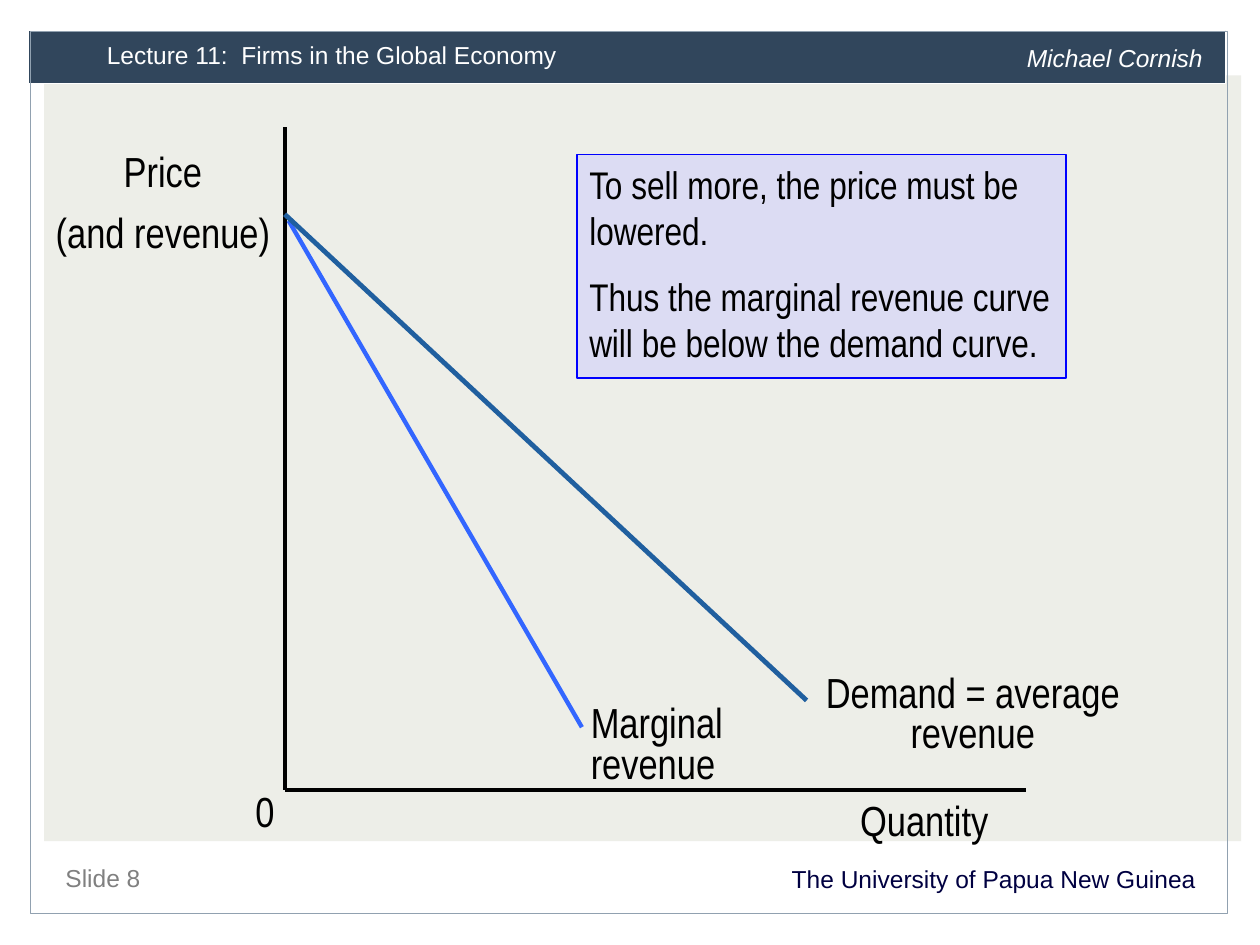
import pptx
import pptx.util
import pptx.dml.color
import pptx.enum.shapes
import pptx.enum.text
import pptx.oxml.ns
import lxml.etree

Cm, Pt = pptx.util.Cm, pptx.util.Pt
ALIGN = {
    "l": pptx.enum.text.PP_ALIGN.LEFT,
    "c": pptx.enum.text.PP_ALIGN.CENTER,
    "r": pptx.enum.text.PP_ALIGN.RIGHT,
}
RECT = pptx.enum.shapes.MSO_SHAPE.RECTANGLE
STRAIGHT = pptx.enum.shapes.MSO_CONNECTOR.STRAIGHT

THEME = {
    "body_font": "Arial", "chart_font": "Arial Narrow",
    "small": 14, "note": 22, "label": 24,
    "panel": "EDEEE8", "band": "31465C", "white": "FFFFFF", "frame": "91A1B0",
    "navy": "000041", "grey": "808080", "black": "000000",
    "demand": "205F9F", "marginal": "3366FF",
    "note_fill": "CCCCFF", "note_line": "0000FF",
}

# Boxes are left, top, width, height in centimetres.
TITLE = ("Lecture 11:  Firms in the Global Economy", (1.9, 0.64, 15.57, 0.94))
# text, box, alignment, line spacing in points, colour, italic
PAGE_TEXTS = [
    ("The University of Papua New Guinea", (1.07, 17.35, 23.29, 0.81), "r", 15, "navy", False),
    ("Slide 8", (1.07, 17.15, 11, 0.86), "l", 20, "grey", False),
    ("Michael Cornish", (20.45, 0.71, 4.17, 0.94), "l", 18, "white", True),
]
# box, fill, line, line width
PANEL = ((0.89, 1.52, 24.13, 15.44), "panel", None, 0)
BAND = ((0.58, 0.61, 24.13, 1.07), "band", "white", 0.5)
FRAME = ((0.61, 0.64, 24.13, 17.78), None, "frame", 0.75)
NOTE = ((11.63, 3.12, 9.86, 4.5), "note_fill", "note_line", 0.75)
NOTE_TEXT = [
    "To sell more, the price must be lowered.",
    "Thus the marginal revenue curve will be below the demand curve.",
]

ORIGIN = (5.74, 15.93)
# start, end, colour, width
LINES = [
    ((5.74, 2.57), ORIGIN, "black", 2.5),
    (ORIGIN, (20.68, 15.93), "black", 2.5),
    ((5.82, 4.45), (11.73, 14.66), "marginal", 2.5),
    ((5.74, 4.32), (16.26, 14.12), "demand", 2.75),
]
# paragraphs, box, alignment, line spacing
LABELS = [
    (["Price", "(and revenue)"], (0.81, 3, 4.95, 2.41), "c", 0.8),
    (["Quantity"], (17.09, 15.9, 3.48, 1.3), "l", 1.0),
    (["Demand = average revenue"], (16.31, 13.51, 6.6, 1.9), "c", 0.8),
    (["Marginal revenue"], (11.66, 14.12, 3.45, 1.9), "l", 0.8),
    (["0"], (4.9, 15.72, 1, 1.3), "l", 1.0),
]


def rgb(name):
    return pptx.dml.color.RGBColor.from_string(THEME[name])


def cm(box):
    return [Cm(v) for v in box]


def write(sp, texts, font, size, color="black", align="l", spacing=1.0, italic=False):
    tf = sp.text_frame
    tf.word_wrap = True
    tf.auto_size = pptx.enum.text.MSO_AUTO_SIZE.NONE
    tf.vertical_anchor = pptx.enum.text.MSO_ANCHOR.TOP
    for i, text in enumerate(texts):
        p = tf.add_paragraph() if i else tf.paragraphs[0]
        p.alignment = ALIGN[align]
        p.line_spacing = spacing
        p.space_before = Pt(size / 2 if i else 0)
        r = p.add_run()
        r.text = text
        r.font.name = THEME[font]
        r.font.size = Pt(size)
        r.font.italic = italic
        r.font.color.rgb = rgb(color)


def add_rect(s, box, fill, line, width):
    sp = s.shapes.add_shape(RECT, *cm(box))
    sp.shadow.inherit = False
    if fill:
        sp.fill.solid()
        sp.fill.fore_color.rgb = rgb(fill)
    else:
        sp.fill.background()
    if line:
        sp.line.color.rgb = rgb(line)
        sp.line.width = Pt(width)
    else:
        sp.line.fill.background()
    return sp


def add_line(s, start, end, color, width):
    c = s.shapes.add_connector(STRAIGHT, *cm(start + end))
    c.line.color.rgb = rgb(color)
    c.line.width = Pt(width)
    lxml.etree.SubElement(c._element.spPr, pptx.oxml.ns.qn("a:effectLst"))


def set_alpha(sp, percent):
    color = sp.fill._xPr.find(".//" + pptx.oxml.ns.qn("a:srgbClr"))
    alpha = lxml.etree.SubElement(color, pptx.oxml.ns.qn("a:alpha"))
    alpha.set("val", str(percent * 1000))


def add_page(s):
    add_rect(s, *PANEL)
    add_rect(s, *BAND)
    title = s.shapes.title
    s.shapes._spTree.append(title._element)  # in front of the band
    text, box = TITLE
    title.left, title.top, title.width, title.height = cm(box)
    write(title, [text], "body_font", THEME["small"], "white", spacing=Pt(18))
    add_rect(s, *FRAME)
    for text, box, align, spacing, color, italic in PAGE_TEXTS:
        write(s.shapes.add_textbox(*cm(box)), [text], "body_font", THEME["small"],
              color, align, Pt(spacing), italic)


def add_diagram(s):
    for line in LINES:
        add_line(s, *line)
    for texts, box, align, spacing in LABELS:
        write(s.shapes.add_textbox(*cm(box)), texts, "chart_font", THEME["label"],
              align=align, spacing=spacing)
    note = add_rect(s, *NOTE)
    set_alpha(note, 50)
    write(note, NOTE_TEXT, "chart_font", THEME["note"])


def main():
    prs = pptx.Presentation()
    prs.slide_width, prs.slide_height = Cm(25.4), Cm(19.05)
    s = prs.slides.add_slide(prs.slide_layouts.get_by_name("Title Only"))
    add_page(s)
    add_diagram(s)
    prs.save("out.pptx")


if __name__ == "__main__":
    main()
